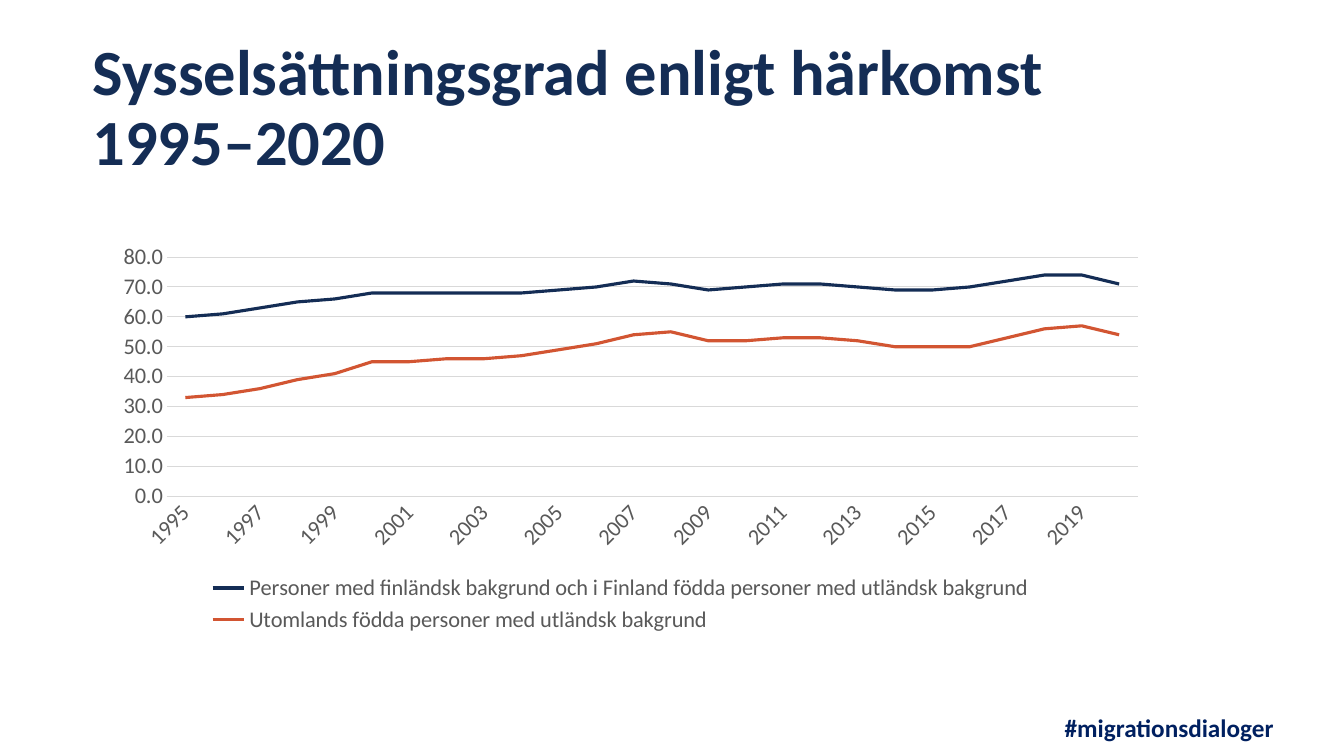
from pptx import Presentation
from pptx.chart.data import CategoryChartData as ChartData
from pptx.dml.color import RGBColor
from pptx.enum.chart import XL_CHART_TYPE as Chart, XL_LEGEND_POSITION as Side, XL_TICK_MARK as Tick
from pptx.enum.text import MSO_ANCHOR as Anchor, MSO_AUTO_SIZE as Fit, PP_ALIGN as Align
from pptx.oxml import parse_xml
from pptx.oxml.ns import nsdecls
from pptx.util import Pt

PX = 9144  # 100 px to the inch
NAVY, RUST, GREY, RULE = "142D55", "D25532", "595959", "D9D9D9"


def color(code):
    return RGBColor.from_string(code)


def write(shape, text, size, code, space, anchor):
    frame = shape.text_frame
    look = dict(margin_left=0, margin_right=0, margin_top=0, margin_bottom=0,
                word_wrap=True, auto_size=Fit.NONE, vertical_anchor=anchor)
    for key, val in look.items():
        setattr(frame, key, val)
    para = frame.paragraphs[0]
    para.line_spacing = space
    para.alignment = Align.LEFT
    run = para.add_run()
    run.text = text
    font = run.font
    font.name, font.size, font.bold = "Calibri", Pt(size), True
    font.color.rgb = color(code)


deck = Presentation()
deck.slide_width, deck.slide_height = 1333 * PX, 750 * PX
slide = deck.slides.add_slide(deck.slide_layouts[5])

# Title and hashtag
title = slide.shapes.title
spot = dict(left=92, top=42, width=1047, height=136)
for key, val in spot.items():
    setattr(title, key, val * PX)
write(title, "Sysselsättningsgrad enligt härkomst 1995–2020", 46, NAVY, 0.9, Anchor.BOTTOM)
tag = slide.shapes.add_textbox(*[n * PX for n in (1056, 704, 263, 23)])
write(tag, "#migrationsdialoger", 18, "002060", 1.1, Anchor.TOP)

# Employment rate by origin, in per cent
rates = [
    ("Personer med finländsk bakgrund och i Finland födda personer med utländsk bakgrund", NAVY,
     [60, 61, 63, 65, 66, 68, 68, 68, 68, 68, 69, 70, 72,
      71, 69, 70, 71, 71, 70, 69, 69, 70, 72, 74, 74, 71]),
    ("Utomlands födda personer med utländsk bakgrund", RUST,
     [33, 34, 36, 39, 41, 45, 45, 46, 46, 47, 49, 51, 54,
      55, 52, 52, 53, 53, 52, 50, 50, 50, 53, 56, 57, 54]),
]
data = ChartData(number_format="0.0")
data.categories = [str(year) for year in range(1995, 2021)]
for name, _, vals in rates:
    data.add_series(name, vals)
box = [n * PX for n in (92, 231, 1047, 402)]
chart = slide.shapes.add_chart(Chart.LINE, *box, data).chart
chart.has_title = False
chart.has_legend = True
chart.legend.position = Side.BOTTOM
chart.legend.include_in_layout = False

for line, (_, code, _) in zip(chart.plots[0].series, rates):
    line.smooth = False
    line.format.line.width = Pt(2.25)
    line.format.line.color.rgb = color(code)

years, scale = chart.category_axis, chart.value_axis
for part in (chart, chart.legend, years.tick_labels, scale.tick_labels):
    part.font.name, part.font.size = "Calibri", Pt(16)
    part.font.color.rgb = color(GREY)
for axis in (years, scale):
    axis.major_tick_mark = axis.minor_tick_mark = Tick.NONE
scale.minimum_scale, scale.maximum_scale, scale.major_unit = 0, 80, 10
scale.has_major_gridlines = True
scale.tick_labels.number_format = "0.0"
scale.tick_labels.number_format_is_linked = False
scale.format.line.fill.background()
for rule in (years.format.line, scale.major_gridlines.format.line):
    rule.width = Pt(0.75)
    rule.color.rgb = color(RULE)

# Slanted labels for every second year
area = chart.element.xpath("c:chart/c:plotArea")[0]
area.xpath("c:catAx/c:txPr/a:bodyPr")[0].set("rot", "-2700000")
skip = parse_xml(f'<c:tickLblSkip {nsdecls("c")} val="2"/>')
area.xpath("c:catAx/c:noMultiLvlLbl")[0].addprevious(skip)

# Fixed plot area
for old in area.xpath("c:layout"):
    area.remove(old)
place = dict(layoutTarget="inner", xMode="edge", yMode="edge", x=0.07, y=0.06, w=0.92, h=0.59)
marks = "".join(f'<c:{key} val="{val}"/>' for key, val in place.items())
area.insert(0, parse_xml(
    f'<c:layout {nsdecls("c")}><c:manualLayout>{marks}</c:manualLayout></c:layout>'))

deck.save("out.pptx")
